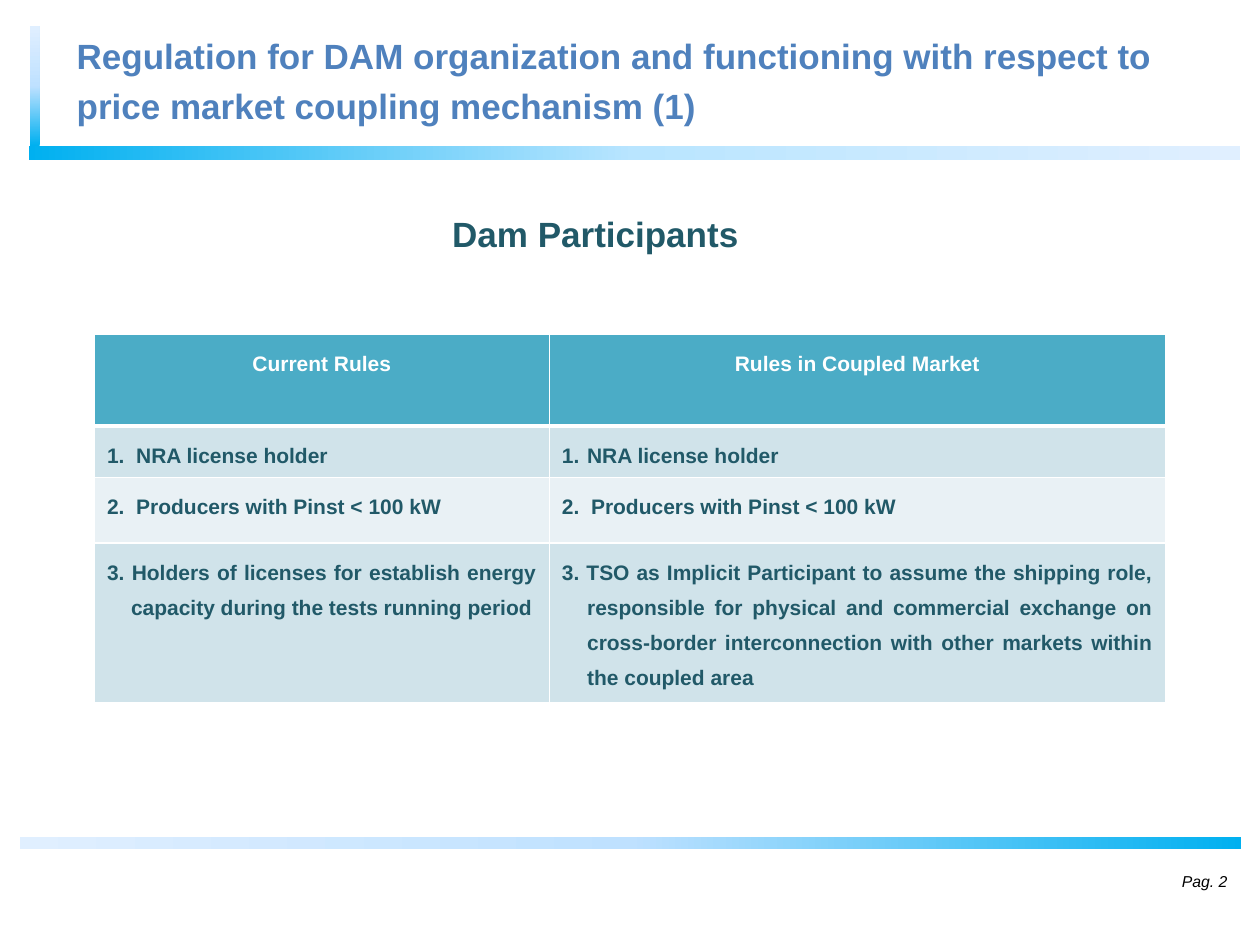
from copy import deepcopy
from dataclasses import dataclass

from pptx import Presentation
from pptx.dml.color import RGBColor
from pptx.enum.shapes import MSO_SHAPE
from pptx.enum.text import MSO_ANCHOR, PP_ALIGN
from pptx.oxml import parse_xml
from pptx.oxml.ns import nsdecls
from pptx.util import Inches, Pt

RECTANGLE = MSO_SHAPE.RECTANGLE
TOP, MIDDLE = MSO_ANCHOR.TOP, MSO_ANCHOR.MIDDLE
LEFT, CENTER, RIGHT, JUSTIFY = (
    PP_ALIGN.LEFT, PP_ALIGN.CENTER, PP_ALIGN.RIGHT, PP_ALIGN.JUSTIFY)


@dataclass(frozen=True)
class Theme:
    font: str = "Arial"
    title: str = "4F81BD"
    dark: str = "215968"
    white: str = "FFFFFF"
    black: str = "000000"
    header: str = "4BACC6"
    band: str = "D0E3EA"
    light_band: str = "E9F1F5"
    bar: tuple = ("00B0F0", "BFE1FF", "E0EFFF")
    title_bar: tuple = ("00B0F0", "B9E5FF", "E0EFFF")
    title_size: int = 20
    table_size: int = 12
    page_size: int = 9


theme = Theme()


def write(paragraph, text, size, color, align=LEFT, spacing=1.0, bold=True, italic=False):
    paragraph.alignment = align
    paragraph.line_spacing = spacing
    run = paragraph.add_run()
    run.text = text
    font = run.font
    font.name, font.size = theme.font, Pt(size)
    font.bold, font.italic = bold, italic
    font.color.rgb = RGBColor.from_string(color)


def add_text_box(box, anchor):
    shape = slide.shapes.add_textbox(*map(Inches, box))
    shape.text_frame.word_wrap = True
    shape.text_frame.vertical_anchor = anchor
    return shape


presentation = Presentation()
presentation.slide_width, presentation.slide_height = Inches(10), Inches(7.5)
slide = presentation.slides.add_slide(presentation.slide_layouts[6])

# Gradient bars: under the title, left of the title, above the footer
bars = [
    ((0.23, 1.16, 9.61, 0.11), 0, theme.title_bar),
    ((-0.2, 0.64, 0.95, 0.08), 270, theme.bar),
    ((0.16, 6.64, 9.69, 0.1), 0, theme.bar[::-1]),
]
for box, rotation, colors in bars:
    shape = slide.shapes.add_shape(RECTANGLE, *map(Inches, box))
    shape.shadow.inherit = False
    shape.rotation = rotation
    shape.line.fill.background()
    shape.fill.gradient()
    shape.fill.gradient_angle = 0
    stop_list = shape.fill._fill._gradFill.gsLst
    stop_list.append(deepcopy(stop_list[0]))
    for stop, position, color in zip(shape.fill.gradient_stops, (0, 0.5, 1), colors):
        stop.position = position
        stop.color.rgb = RGBColor.from_string(color)

# Page number
page = add_text_box((8.75, 6.79, 1.09, 0.4), MIDDLE)
write(page.text_frame.paragraphs[0], "Pag. 2", theme.page_size, theme.black,
      RIGHT, bold=False, italic=True)

# Section heading
heading = add_text_box((3.49, 1.64, 3.01, 0.46), TOP)
heading.fill.solid()
heading.fill.fore_color.rgb = RGBColor.from_string(theme.white)
write(heading.text_frame.paragraphs[0], "Dam Participants", theme.title_size, theme.dark)

# Rules table: each cell is text, alignment, hanging indent, automatic number
rows = [
    (0.73, theme.header, theme.white, [
        ("Current Rules", CENTER, 0, False),
        ("Rules in Coupled Market", CENTER, 0, False)]),
    (0.41, theme.band, theme.dark, [
        ("1.  NRA license holder", LEFT, 0, False),
        ("NRA license holder", JUSTIFY, 0.2, True)]),
    (0.52, theme.light_band, theme.dark, [
        ("2.  Producers with Pinst < 100 kW", LEFT, 0, False),
        ("2.  Producers with Pinst < 100 kW", JUSTIFY, 0, False)]),
    (1.21, theme.band, theme.dark, [
        ("3. Holders of licenses for establish energy capacity during the tests "
         "running period", JUSTIFY, 0.19, False),
        ("3. TSO as Implicit Participant to assume the shipping role, responsible for "
         "physical and commercial exchange on cross-border interconnection with other "
         "markets within the coupled area", JUSTIFY, 0.2, False)]),
]
widths = [3.61, 4.89]
height = sum(row[0] for row in rows)
table = slide.shapes.add_table(
    len(rows), len(widths), Inches(0.75), Inches(2.65),
    Inches(sum(widths)), Inches(height)).table
for column, width in zip(table.columns, widths):
    column.width = Inches(width)

for row_index, (row_height, fill, color, cells) in enumerate(rows):
    table.rows[row_index].height = Inches(row_height)
    for column_index, (text, align, indent, numbered) in enumerate(cells):
        cell = table.cell(row_index, column_index)
        cell.margin_bottom = Inches(0.02)
        cell.fill.solid()
        cell.fill.fore_color.rgb = RGBColor.from_string(fill)

        # White borders, thicker below the header
        cell_properties = cell._tc.get_or_add_tcPr()
        for position, side in enumerate("LRTB"):
            below_header = (row_index, side) in ((0, "B"), (1, "T"))
            border = parse_xml(
                f'<a:ln{side} {nsdecls("a")} w="{Pt(3 if below_header else 1)}">'
                f'<a:solidFill><a:srgbClr val="{theme.white}"/></a:solidFill></a:ln{side}>')
            cell_properties.insert(position, border)

        paragraph = cell.text_frame.paragraphs[0]
        write(paragraph, text, theme.table_size, color, align, 1.5)
        paragraph_properties = paragraph._p.get_or_add_pPr()
        if indent:
            paragraph_properties.set("marL", str(Inches(indent)))
            paragraph_properties.set("indent", str(-Inches(indent)))
        if numbered:
            paragraph_properties.append(parse_xml(
                f'<a:buAutoNum {nsdecls("a")} type="arabicPeriod"/>'))

# Title
title = add_text_box((0.51, 0.21, 9.29, 0.79), MIDDLE)
write(title.text_frame.paragraphs[0],
      "Regulation for DAM organization and functioning with respect to price market "
      "coupling mechanism (1)", theme.title_size, theme.title, spacing=1.2)

presentation.save("out.pptx")
